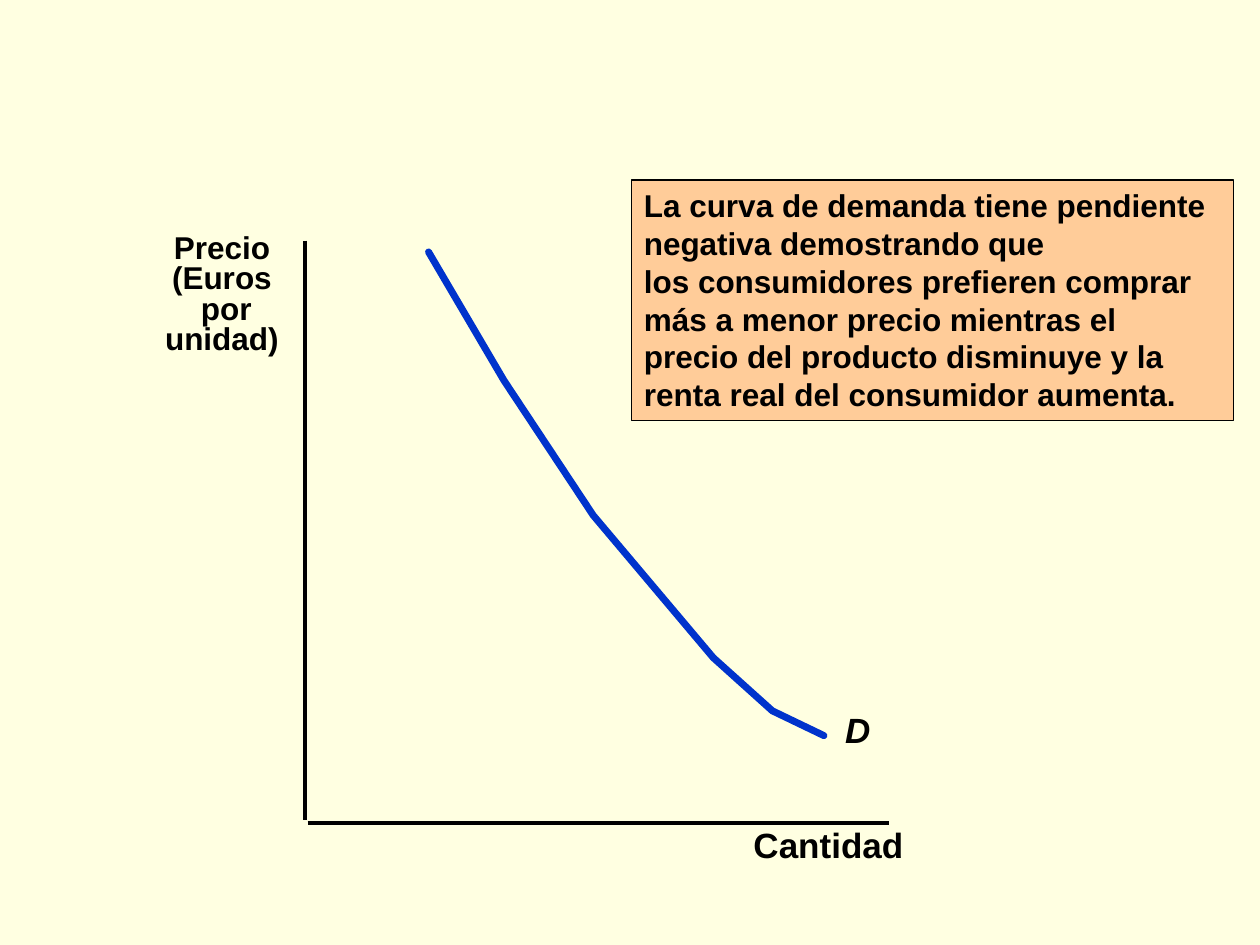
import lxml.etree
import pptx
import pptx.dml.color
import pptx.enum.shapes
import pptx.enum.text
import pptx.oxml.ns
import pptx.util

Cm = pptx.util.Cm
Pt = pptx.util.Pt
qn = pptx.oxml.ns.qn
RGB = pptx.dml.color.RGBColor.from_string
ALIGN = pptx.enum.text.PP_ALIGN

THEME = {
    "background": RGB("FFFFE1"),
    "ink": RGB("000000"),
    "curve": RGB("0033CC"),
    "note": RGB("FFCC99"),
    "font": "Arial",
    "body": Pt(18),
    "label": Pt(20),
}


def set_text(sp, text, size=THEME["body"], italic=False, align=ALIGN.LEFT,
             spacing=None, wrap=True):
    tf = sp.text_frame
    tf.word_wrap = wrap
    tf.vertical_anchor = pptx.enum.text.MSO_ANCHOR.TOP
    for i, line in enumerate(text.split("\n")):
        p = tf.paragraphs[0] if i == 0 else tf.add_paragraph()
        p.alignment = align
        p.line_spacing = spacing
        r = p.add_run()
        r.text = line
        r.font.name = THEME["font"]
        r.font.size = size
        r.font.bold = True
        r.font.italic = italic
        r.font.color.rgb = THEME["ink"]


prs = pptx.Presentation()
prs.slide_width, prs.slide_height = Cm(25.4), Cm(19.05)
s = prs.slides.add_slide(prs.slide_layouts[6])
s.background.fill.solid()
s.background.fill.fore_color.rgb = THEME["background"]

# Price and quantity axes
for x1, y1, x2, y2 in [(6.15, 4.85, 6.15, 16.54), (6.2, 16.59, 17.93, 16.59)]:
    axis = s.shapes.add_connector(pptx.enum.shapes.MSO_CONNECTOR.STRAIGHT,
                                  Cm(x1), Cm(y1), Cm(x2), Cm(y2))
    axis.line.color.rgb = THEME["ink"]
    axis.line.width = Pt(2)
    lxml.etree.SubElement(axis._element.spPr, qn("a:effectLst"))

# Demand curve with rounded ends
points = [(8.64, 5.08), (10.16, 7.67), (11.96, 10.39),
          (14.38, 13.26), (15.57, 14.33), (16.61, 14.83)]
points = [(Cm(x), Cm(y)) for x, y in points]
fb = s.shapes.build_freeform(*points[0])
fb.add_line_segments(points[1:], close=False)
curve = fb.convert_to_shape()
curve.shadow.inherit = False
curve.fill.background()
curve.line.color.rgb = THEME["curve"]
curve.line.width = Pt(4)
ln = curve._element.spPr.find(qn("a:ln"))
ln.set("cap", "rnd")
lxml.etree.SubElement(ln, qn("a:round"))

# Explanatory note
note = s.shapes.add_shape(pptx.enum.shapes.MSO_SHAPE.RECTANGLE,
                          Cm(12.73), Cm(3.63), Cm(12.14), Cm(4.85))
note.shadow.inherit = False
note.fill.solid()
note.fill.fore_color.rgb = THEME["note"]
note.line.color.rgb = THEME["ink"]
note.line.width = Pt(1)
set_text(note, "La curva de demanda tiene pendiente negativa demostrando que\n"
               "los consumidores prefieren comprar\n"
               "más a menor precio mientras el\n"
               "precio del producto disminuye y la\n"
               "renta real del consumidor aumenta.")

# Curve and axis labels
labels = [
    ("D", (16.79, 14.15, 1.02, 1.09),
     dict(size=THEME["label"], italic=True, wrap=False)),
    ("Cantidad", (14.94, 16.48, 3.53, 1.1),
     dict(size=THEME["label"], wrap=False)),
    ("Precio\n(Euros\n por unidad)", (2.9, 4.62, 3.15, 2.69),
     dict(align=ALIGN.CENTER, spacing=0.8)),
]
for text, box, fmt in labels:
    set_text(s.shapes.add_textbox(*map(Cm, box)), text, **fmt)

prs.save("out.pptx")
